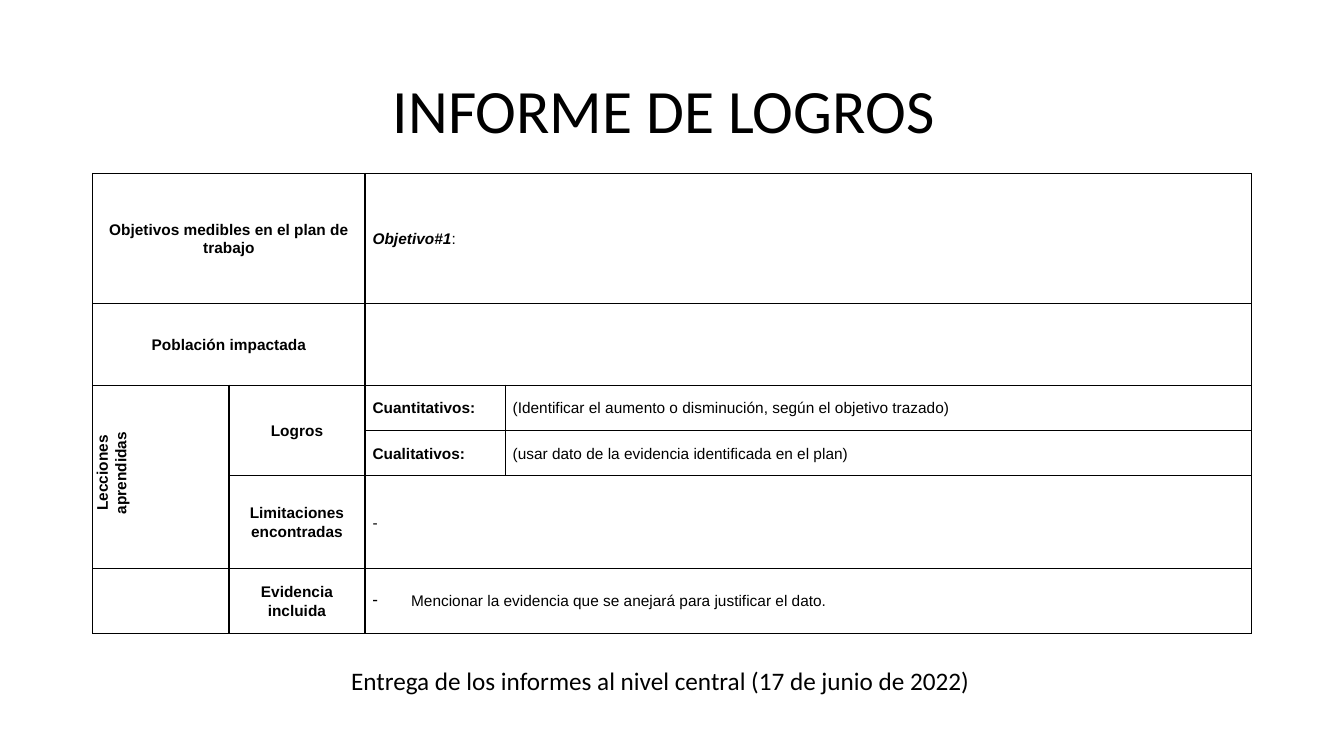
from dataclasses import dataclass

from lxml.etree import SubElement
from pptx import Presentation
from pptx.dml.color import RGBColor
from pptx.enum.text import MSO_ANCHOR, PP_ALIGN
from pptx.oxml import parse_xml
from pptx.oxml.ns import nsdecls, qn
from pptx.util import Cm, Pt


@dataclass(frozen=True)
class Theme:
    ink: RGBColor = RGBColor(0, 0, 0)
    heading_font: str = "Calibri"
    table_font: str = "Arial"
    title_size: int = 44
    footer_size: int = 18
    table_size: int = 11
    border_width: int = 1


THEME = Theme()


def add_span(para, text, **formats):
    span = para.add_run()
    span.text = text
    span.font.color.rgb = THEME.ink
    for name, value in formats.items():
        setattr(span.font, name, value)


def set_borders(cell):
    properties = cell._tc.get_or_add_tcPr()
    for position, side in enumerate(("lnL", "lnR", "lnT", "lnB")):
        properties.insert(position, parse_xml(
            f'<a:{side} {nsdecls("a")} w="{Pt(THEME.border_width)}">'
            f'<a:solidFill><a:srgbClr val="{THEME.ink}"/></a:solidFill></a:{side}>'))


deck = Presentation()
deck.slide_width, deck.slide_height = Cm(33.87), Cm(19.05)
page = deck.slides.add_slide(deck.slide_layouts[6])

# Title and delivery date: text, place, size, alignment, anchor, line spacing
headings = [
    ("INFORME DE LOGROS", (2.13, 1.02, 29.21, 3.68), THEME.title_size,
     PP_ALIGN.CENTER, MSO_ANCHOR.MIDDLE, 0.9),
    ("Entrega de los informes al nivel central (17 de junio de 2022)",
     (8.6, 16.64, 18.82, 1.02), THEME.footer_size, PP_ALIGN.LEFT, MSO_ANCHOR.TOP, 1.0),
]
for text, place, size, alignment, anchor, spacing in headings:
    box = page.shapes.add_textbox(*map(Cm, place))
    box.text_frame.word_wrap = True
    box.text_frame.vertical_anchor = anchor
    para = box.text_frame.paragraphs[0]
    para.alignment, para.line_spacing = alignment, spacing
    add_span(para, text, size=Pt(size), name=THEME.heading_font)

# Report table
column_widths = [3.43, 3.43, 3.53, 18.8]
row_heights = [3.28, 2.06, 1.14, 1.14, 2.34, 1.63]
report = page.shapes.add_table(
    len(row_heights), len(column_widths), Cm(2.34), Cm(4.37),
    Cm(sum(column_widths)), Cm(sum(row_heights))).table
report.first_row = report.horz_banding = False
for column, width in zip(report.columns, column_widths):
    column.width = Cm(width)
for row, height in zip(report.rows, row_heights):
    row.height = Cm(height)
for cell in report.iter_cells():
    cell.fill.background()
    set_borders(cell)

# First and last cell of each merged block
merges = [((0, 0), (0, 1)), ((0, 2), (0, 3)), ((1, 0), (1, 1)), ((1, 2), (1, 3)),
          ((2, 0), (4, 0)), ((2, 1), (3, 1)), ((4, 2), (4, 3)), ((5, 2), (5, 3))]
for first, last in merges:
    report.cell(*first).merge(report.cell(*last))

# Each cell holds paragraphs, each paragraph holds (text, format) spans
bold, plain = {"bold": True}, {"bold": False}
contents = [
    (0, 0, PP_ALIGN.CENTER, [[("Objetivos medibles en el plan de trabajo", bold)]]),
    (0, 2, PP_ALIGN.JUSTIFY, [[("Objetivo#1", {"bold": True, "italic": True}), (":", plain)]]),
    (1, 0, PP_ALIGN.CENTER, [[("Población impactada", bold)]]),
    (2, 0, PP_ALIGN.CENTER, [[("Lecciones aprendidas", bold)]]),
    (2, 1, PP_ALIGN.CENTER, [[("Logros", bold)]]),
    (2, 2, PP_ALIGN.LEFT, [[("Cuantitativos:", bold)]]),
    (2, 3, PP_ALIGN.JUSTIFY,
     [[("(Identificar el aumento o disminución, según el objetivo trazado)", plain)]]),
    (3, 2, PP_ALIGN.LEFT, [[("Cualitativos:", bold)]]),
    (3, 3, PP_ALIGN.JUSTIFY,
     [[("(usar dato de la evidencia identificada en el plan)", plain)]]),
    (4, 1, PP_ALIGN.CENTER, [[("Limitaciones", bold)], [("encontradas", bold)]]),
    (4, 2, PP_ALIGN.LEFT, [[("-", plain)]]),
    (5, 1, PP_ALIGN.CENTER, [[("Evidencia incluida", bold)]]),
    (5, 2, PP_ALIGN.JUSTIFY,
     [[("Mencionar la evidencia que se anejará para justificar el dato.", plain)]]),
]
cell_format = {"vertical_anchor": MSO_ANCHOR.MIDDLE, "margin_left": Cm(0.19),
               "margin_right": Cm(0.19), "margin_top": 0, "margin_bottom": 0}
for row, column, alignment, paragraphs in contents:
    cell = report.cell(row, column)
    for name, value in cell_format.items():
        setattr(cell, name, value)
    for index, spans in enumerate(paragraphs):
        frame = cell.text_frame
        para = frame.add_paragraph() if index else frame.paragraphs[0]
        para.alignment, para.line_spacing = alignment, 1.07
        for text, formats in spans:
            add_span(para, text, size=Pt(THEME.table_size), name=THEME.table_font, **formats)

# Upward label and dashed evidence item
lessons = report.cell(2, 0)
lessons._tc.get_or_add_tcPr().set("vert", "vert270")
lessons.text_frame.paragraphs[0]._p.get_or_add_pPr().set("marL", str(Cm(0.2)))
evidence = report.cell(5, 2).text_frame.paragraphs[0]._p.get_or_add_pPr()
evidence.set("marL", str(Cm(0.97)))
evidence.set("indent", str(-Cm(0.97)))
SubElement(evidence, qn("a:buChar")).set("char", "-")

deck.save("out.pptx")
